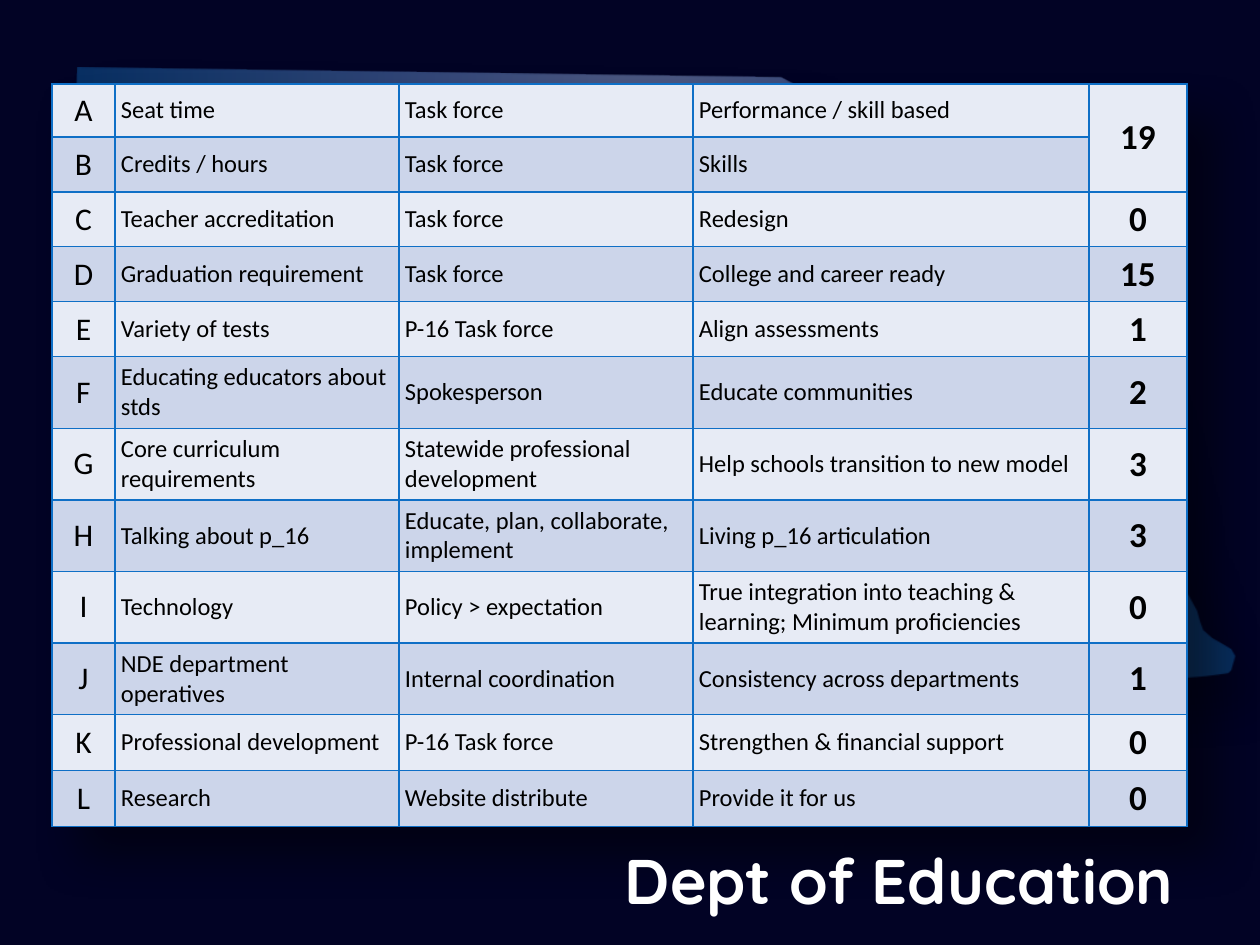
from lxml.etree import SubElement
from pptx import Presentation
from pptx.dml.color import RGBColor
from pptx.enum.shapes import MSO_SHAPE
from pptx.enum.text import MSO_ANCHOR, MSO_AUTO_SIZE, PP_ALIGN
from pptx.oxml import parse_xml
from pptx.oxml.ns import nsdecls, qn
from pptx.util import Pt

SCALE = 914400 / 126
COLORS = {
    "black": "000000", "white": "FFFFFF", "tint": "0A0D96", "border": "0F6FC6",
    "light": "E7EBF5", "dark": "CCD5EA",
    "edge": "0C599F", "mid": "6B8FCF", "center": "91A9DD",
}
STATE_STOPS = [(0, "edge"), (33, "mid"), (47, "center"),
               (53, "center"), (68, "mid"), (100, "edge")]
STATE_OUTLINE = [
    (78, 68), (67, 467), (316, 479), (325, 679), (815, 684), (1051, 683),
    (1168, 679), (1206, 676), (1228, 673), (1231, 670), (1235, 656),
    (1231, 649), (1221, 643), (1212, 638), (1203, 630), (1200, 622),
    (1197, 611), (1186, 591), (1178, 580), (1178, 556), (1160, 543),
    (1159, 490), (1148, 461), (1142, 417), (1129, 397), (1128, 375),
    (1113, 352), (1109, 276), (1094, 267), (1081, 249), (1079, 228),
    (1061, 193), (1042, 178), (1019, 144), (1009, 141), (1014, 139),
    (999, 130), (966, 120), (955, 105), (941, 102), (898, 113),
    (838, 113), (822, 100), (781, 78),
]
COL_WIDTHS = [63, 284, 294, 396, 98]
ROW_HEIGHTS = [53, 54] + [55] * 3 + [71] * 5 + [56] * 2
ROWS = [
    ("A", "Seat time", "Task force", "Performance / skill based", "19"),
    ("B", "Credits / hours", "Task force", "Skills", ""),
    ("C", "Teacher accreditation", "Task force", "Redesign", "0"),
    ("D", "Graduation requirement", "Task force", "College and career ready", "15"),
    ("E", "Variety of tests", "P-16 Task force", "Align assessments", "1"),
    ("F", "Educating educators about stds", "Spokesperson", "Educate communities", "2"),
    ("G", "Core curriculum requirements", "Statewide professional development",
     "Help schools transition to new model", "3"),
    ("H", "Talking about p_16", "Educate, plan, collaborate, implement",
     "Living p_16 articulation", "3"),
    ("I", "Technology", "Policy > expectation",
     "True integration into teaching & learning; Minimum proficiencies", "0"),
    ("J", "NDE department operatives", "Internal coordination",
     "Consistency across departments", "1"),
    ("K", "Professional development", "P-16 Task force",
     "Strengthen & financial support", "0"),
    ("L", "Research", "Website distribute", "Provide it for us", "0"),
]


def px(n):
    return round(n * SCALE)


def rgb(name):
    return RGBColor.from_string(COLORS[name])


def shadow_effect():
    """Soft black shadow falling to the lower right."""
    return parse_xml(
        f'<a:effectLst {nsdecls("a")}><a:outerShdw blurRad="{Pt(26)}" dist="{Pt(23.4)}" '
        f'dir="3000000" algn="tl" rotWithShape="0"><a:srgbClr val="{COLORS["black"]}">'
        '<a:alpha val="45000"/></a:srgbClr></a:outerShdw></a:effectLst>')


class SlideBuilder:
    body_font = "Calibri"
    title_font = "Quicksand"

    def __init__(self, prs):
        self.s = prs.slides.add_slide(prs.slide_layouts[5])

    def background(self, width, height):
        fill = self.s.background.fill
        fill.solid()
        fill.fore_color.rgb = rgb("black")
        sp = self.s.shapes.add_shape(MSO_SHAPE.RECTANGLE, 0, 0, px(width), px(height))
        sp.shadow.inherit = False
        sp.line.fill.background()
        sp.fill.solid()
        sp.fill.fore_color.rgb = rgb("tint")
        color = sp._element.spPr.find(qn("a:solidFill"))[0]
        SubElement(color, qn("a:alpha"), val="25000")

    def gradient_outline(self, points, stops):
        builder = self.s.shapes.build_freeform(*points[0], scale=SCALE)
        builder.add_line_segments(points[1:], close=True)
        sp = builder.convert_to_shape()
        sp.line.fill.background()
        gs = "".join(
            f'<a:gs pos="{pos * 1000}"><a:srgbClr val="{COLORS[name]}">'
            '<a:alpha val="50000"/></a:srgbClr></a:gs>' for pos, name in stops)
        spPr = sp._element.spPr
        spPr.find(qn("a:custGeom")).addnext(parse_xml(
            f'<a:gradFill {nsdecls("a")} rotWithShape="1"><a:gsLst>{gs}</a:gsLst>'
            '<a:lin ang="0" scaled="0"/></a:gradFill>'))
        spPr.append(shadow_effect())

    def table(self, left, top, widths, heights, rows):
        frame = self.s.shapes.add_table(len(rows), len(widths), px(left), px(top),
                                        px(sum(widths)), px(sum(heights)))
        table = frame.table
        table.first_row = table.horz_banding = False
        table._tbl.tblPr.insert(0, shadow_effect())
        for column, width in zip(table.columns, widths):
            column.width = px(width)
        for row, height in zip(table.rows, heights):
            row.height = px(height)
        for i, texts in enumerate(rows):
            for j, text in enumerate(texts):
                self.cell(table.cell(i, j), text, "dark" if i % 2 else "light",
                          centered=j in (0, 4), size=(18, 14, 14, 14, 20)[j], bold=j == 4)
        table.cell(0, 4).merge(table.cell(1, 4))

    def cell(self, cell, text, fill, centered, size, bold):
        cell.margin_left = cell.margin_right = px(6)
        cell.margin_top = cell.margin_bottom = px(6)
        cell.vertical_anchor = MSO_ANCHOR.MIDDLE
        for side in "LRTB":
            cell._tc.tcPr.append(parse_xml(
                f'<a:ln{side} {nsdecls("a")} w="{Pt(1)}"><a:solidFill>'
                f'<a:srgbClr val="{COLORS["border"]}"/></a:solidFill></a:ln{side}>'))
        cell.fill.solid()
        cell.fill.fore_color.rgb = rgb(fill)
        p = cell.text_frame.paragraphs[0]
        p.text = text
        p.alignment = PP_ALIGN.CENTER if centered else PP_ALIGN.LEFT
        self.style(p, self.body_font, size, "black", bold)

    def title(self, text, left, top, width, height):
        sp = self.s.shapes.title
        sp.left, sp.top, sp.width, sp.height = map(px, (left, top, width, height))
        self.s.shapes._spTree.append(sp._element)  # bring to front
        tf = sp.text_frame
        tf.word_wrap = True
        tf.auto_size = MSO_AUTO_SIZE.NONE
        tf.vertical_anchor = MSO_ANCHOR.MIDDLE
        p = tf.paragraphs[0]
        p.text = text
        p.alignment = PP_ALIGN.RIGHT
        self.style(p, self.title_font, 36, "white", True)

    def style(self, p, font, size, color, bold):
        p.font.name = font
        p.font.size = Pt(size)
        p.font.bold = bold
        p.font.color.rgb = rgb(color)


def main():
    prs = Presentation()
    prs.slide_width, prs.slide_height = px(1260), px(945)
    slide = SlideBuilder(prs)
    slide.background(1260, 945)
    slide.gradient_outline(STATE_OUTLINE, STATE_STOPS)
    slide.table(52, 84, COL_WIDTHS, ROW_HEIGHTS, ROWS)
    slide.title("Dept of Education", 609, 835, 577, 89)
    prs.save("out.pptx")


if __name__ == "__main__":
    main()
